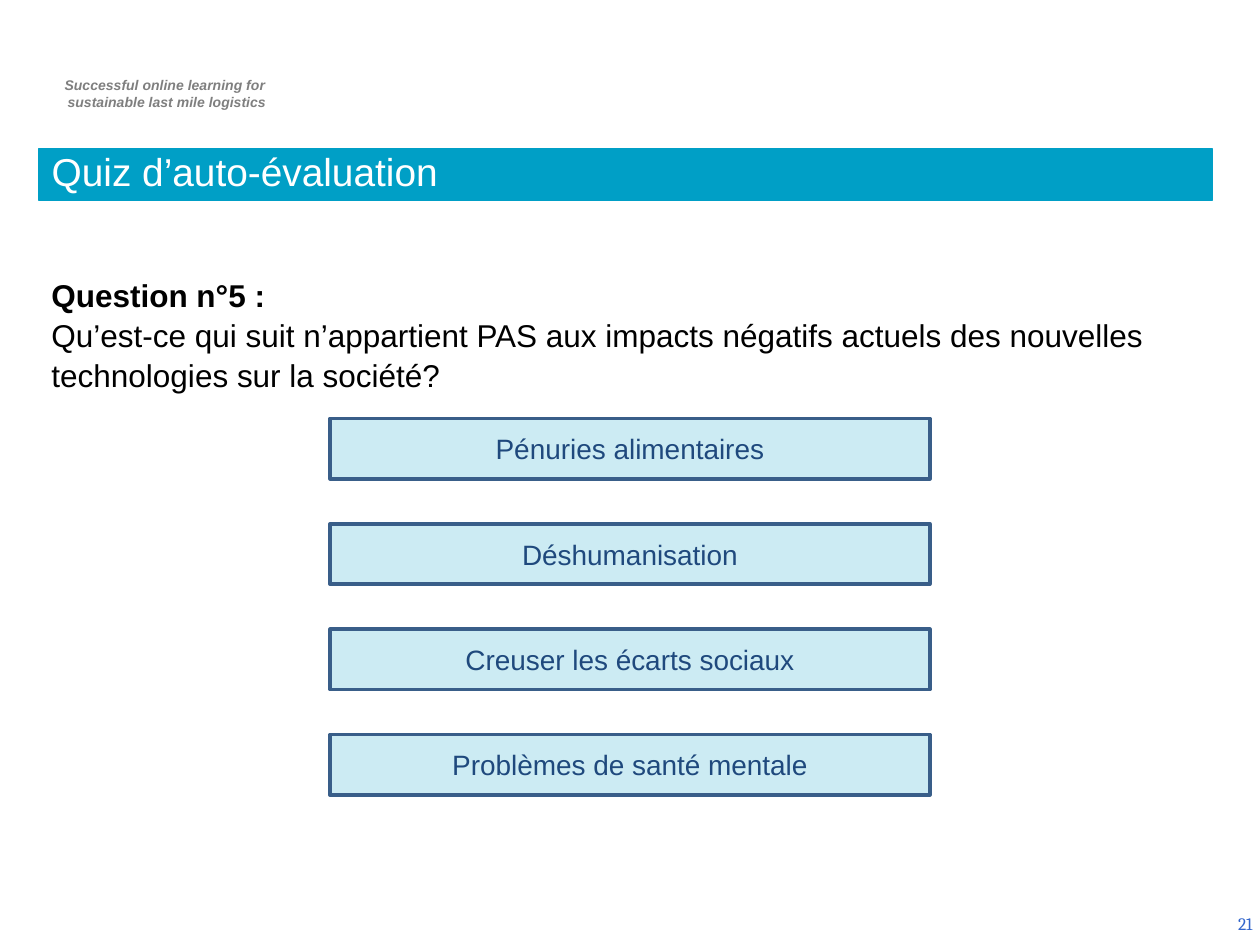
import pptx
import pptx.util
import pptx.dml.color
import pptx.enum.shapes
import pptx.enum.text
import pptx.oxml.ns
from lxml import etree

Inches = pptx.util.Inches
Pt = pptx.util.Pt
ALIGN = pptx.enum.text.PP_ALIGN
ANCHOR = pptx.enum.text.MSO_ANCHOR

COLORS = {
    "band": "009FC6",
    "outline": "395E89",
    "answer": "1F497D",
    "tagline": "7F7F7F",
    "number": "3366CC",
    "body": "000000",
    "title": "FFFFFF",
}

TAGLINE = ["Successful online learning for ", "sustainable last mile logistics"]
ANSWERS = [
    "Pénuries alimentaires",
    "Déshumanisation",
    "Creuser les écarts sociaux",
    "Problèmes de santé mentale",
]


def rgb(name):
    return pptx.dml.color.RGBColor.from_string(COLORS[name])


def set_frame(tf, anchor):
    values = {
        "word_wrap": True,
        "auto_size": pptx.enum.text.MSO_AUTO_SIZE.NONE,
        "vertical_anchor": anchor,
        "margin_left": Inches(0.1),
        "margin_right": Inches(0.1),
        "margin_top": Inches(0.05),
        "margin_bottom": Inches(0.05),
    }
    for key, value in values.items():
        setattr(tf, key, value)


def write(p, text, color, size, align=ALIGN.LEFT, font="Arial", **values):
    p.alignment = align
    r = p.add_run()
    r.text = text
    r.font.color.rgb = rgb(color)
    for key, value in {"name": font, "size": Pt(size), **values}.items():
        setattr(r.font, key, value)


def add_text(s, box, anchor=ANCHOR.TOP):
    tf = s.shapes.add_textbox(*map(Inches, box)).text_frame
    set_frame(tf, anchor)
    return tf


def add_tagline(s, box):
    tf = add_text(s, box)
    for i, line in enumerate(TAGLINE):
        p = tf.add_paragraph() if i else tf.paragraphs[0]
        write(p, line, "tagline", 8, ALIGN.CENTER, bold=True, italic=True)
        p._p.get_or_add_pPr().set("marL", str(Inches(0.04)))


def add_title(s, box):
    sp = s.shapes.title
    sp.left, sp.top, sp.width, sp.height = map(Inches, box)
    sp.fill.solid()
    sp.fill.fore_color.rgb = rgb("band")
    sp.line.color.rgb = rgb("band")
    sp.line.width = Pt(0.75)
    set_frame(sp.text_frame, ANCHOR.BOTTOM)
    p = sp.text_frame.paragraphs[0]
    p.line_spacing = 0.8
    write(p, "Quiz d’auto-évaluation", "title", 22.2)


def add_question(s, box):
    tf = add_text(s, box)
    write(tf.paragraphs[0], "Question n°5 :", "body", 18, bold=True)
    write(
        tf.add_paragraph(),
        "Qu’est-ce qui suit n’appartient PAS aux impacts négatifs actuels "
        "des nouvelles technologies sur la société?",
        "body",
        18,
    )
    for p in tf.paragraphs:
        p.line_spacing = 1.05


def add_answers(s, box, bar_height=0.48):
    left, top, width, height = box
    step = (height - bar_height) / (len(ANSWERS) - 1)
    for i, answer in enumerate(ANSWERS):
        sp = s.shapes.add_shape(
            pptx.enum.shapes.MSO_SHAPE.RECTANGLE,
            *map(Inches, (left, top + i * step, width, bar_height)),
        )
        sp.shadow.inherit = False
        sp.fill.solid()
        sp.fill.fore_color.rgb = rgb("band")
        clr = sp._element.spPr.find(pptx.oxml.ns.qn("a:solidFill"))[0]
        etree.SubElement(clr, pptx.oxml.ns.qn("a:alpha"), val="20000")
        sp.line.color.rgb = rgb("outline")
        sp.line.width = Pt(2)
        set_frame(sp.text_frame, ANCHOR.MIDDLE)
        write(sp.text_frame.paragraphs[0], answer, "answer", 16, ALIGN.CENTER)


def add_number(s, box):
    tf = add_text(s, box, ANCHOR.MIDDLE)
    write(tf.paragraphs[0], "21", "number", 10, ALIGN.RIGHT, "Cambria")


def main():
    prs = pptx.Presentation()
    prs.slide_width, prs.slide_height = Inches(10), Inches(7.5)
    s = prs.slides.add_slide(prs.slide_layouts[5])
    add_tagline(s, (0.29, 0.56, 2.03, 0.37))
    add_title(s, (0.31, 1.18, 9.31, 0.41))
    add_question(s, (0.31, 2.13, 9.31, 1.31))
    add_answers(s, (2.62, 3.32, 4.76, 2.99))
    add_number(s, (7.71, 7.13, 2.33, 0.4))
    prs.save("out.pptx")


if __name__ == "__main__":
    main()
